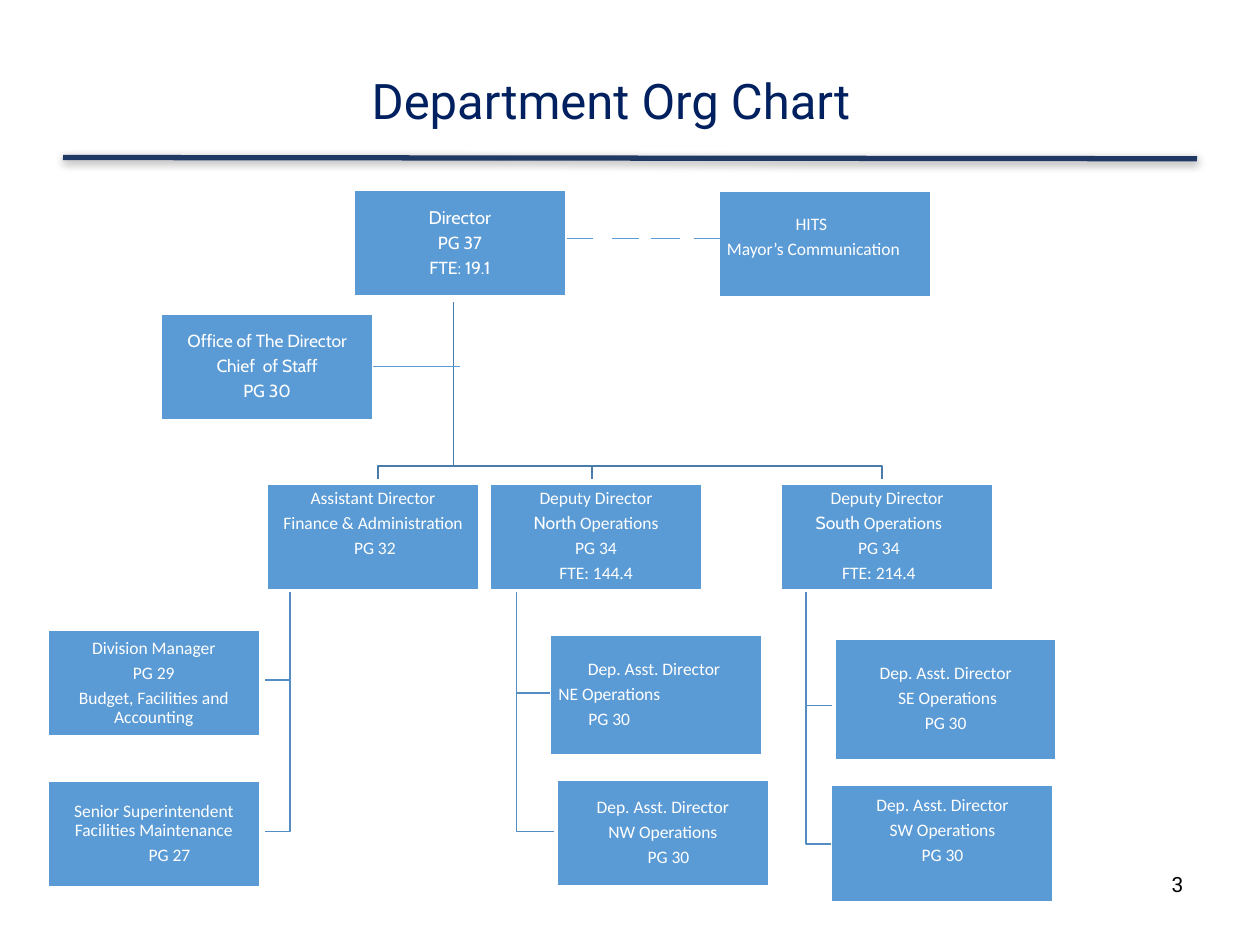
from lxml import etree
from pptx import Presentation
from pptx.dml.color import RGBColor
from pptx.enum.shapes import MSO_CONNECTOR, MSO_SHAPE
from pptx.enum.text import MSO_ANCHOR, PP_ALIGN
from pptx.oxml import parse_xml
from pptx.oxml.ns import nsdecls
from pptx.util import Inches, Pt

prs = Presentation()
prs.slide_width, prs.slide_height = Inches(10), Inches(7.5)
s = prs.slides.add_slide(prs.slide_layouts[6])
U = prs.slide_width / 100  # grid of 100 columns by 75 rows


def rgb(color):
    return RGBColor.from_string(color)


def add_line(x1, y1, x2, y2, color, width, effects=""):
    c = s.shapes.add_connector(MSO_CONNECTOR.STRAIGHT, *(round(v * U) for v in (x1, y1, x2, y2)))
    c.line.color.rgb = rgb(color)
    c.line.width = Pt(width)
    c._element.spPr.append(parse_xml(f'<a:effectLst {nsdecls("a")}>{effects}</a:effectLst>'))
    return c


# Rule under the title
add_line(5, 12.5, 95, 12.6, "203864", 3,
         '<a:outerShdw blurRad="63500" dist="20000" dir="5400000" rotWithShape="0">'
         '<a:srgbClr val="000000"><a:alpha val="38000"/></a:srgbClr></a:outerShdw>')

# Title and page number
for text, x, y, w, h, size, color, align, indent in (
        ("Department Org Chart", 5, 3.3, 68.6, 9.2, 28, "002060", PP_ALIGN.LEFT, 24.5),
        ("3", 71.6, 68.7, 23.3, 4, 12, "000000", PP_ALIGN.RIGHT, 0)):
    tf = s.shapes.add_textbox(*(round(v * U) for v in (x, y, w, h))).text_frame
    tf.word_wrap = True
    if indent:
        tf.vertical_anchor = MSO_ANCHOR.MIDDLE
        tf.margin_left = tf.margin_right = tf.margin_top = tf.margin_bottom = 0
    p = tf.paragraphs[0]
    p.alignment = align
    p._p.get_or_add_pPr().set("marL", str(round(indent * U)))
    r = p.add_run()
    r.text = text
    r.font.name, r.font.size, r.font.color.rgb = "Roboto", Pt(size), rgb(color)

# Bent links: director to deputies, then each deputy to its reports
BUS, ROW2, BOTTOM2 = 36.7, 38.4, 46.9
links = [("497CAB", [(36.5, 23.5), (36.5, BUS), (x, BUS), (x, ROW2)])
         for x in (70.4, 47.3, 29.7)]
for spine, ends in ((63.7, [(66, 67), (66.3, 55.5)]),
                    (40.6, [(44.2, 66.1), (43.7, 55.1)]),
                    (22.9, [(20.6, 66.2), (20.6, 54.2)])):
    links += [("538DC1", [(spine, BOTTOM2), (spine, y), (x, y)]) for x, y in ends]
for color, points in links:
    fb = s.shapes.build_freeform(*points[0], scale=U)
    fb.add_line_segments(points[1:], close=False)
    sp = fb.convert_to_shape()
    sp.shadow.inherit = False
    sp.fill.background()
    sp.line.color.rgb = rgb(color)
    sp.line.width = Pt(1)

# Boxes: x, y, w, h, font, space below the text, lines, sideways shift by line
# A bar in a line ends a first part set in Cabin
W, H = 16.8, 8.4
DEP = "Dep. Asst. Director"
boxes = [
    (28.1, 15.1, W, H, "Cabin", 0, ["Director", "PG 37", "FTE: 19.1"], {}),
    (21.2, ROW2, W, H, "Calibri", 2,
     ["Assistant Director", "Finance & Administration", "PG 32"], {2: 0.3}),
    (3.8, 50, W, H, "Calibri", 0,
     ["Division Manager", "PG 29", "Budget, Facilities and Accounting"], {}),
    (3.8, 62, W, H, "Calibri", 0,
     ["Senior Superintendent Facilities Maintenance", "PG 27"], {1: 2.5}),
    (38.9, ROW2, W, H, "Calibri", 0,
     ["Deputy Director", "North| Operations", "PG 34", "FTE: 144.4"], {}),
    (43.7, 50.4, W, 9.5, "Calibri", 0, [DEP, "NE Operations", "PG 30"], {0: -0.4, 1: -7.5}),
    (44.2, 61.9, W, H, "Calibri", 0, [DEP, "NW Operations", "PG 30"], {2: 0.9}),
    (62, ROW2, W, H, "Calibri", 0,
     ["Deputy Director", "South| Operations", "PG 34", "FTE: 214.4"], {1: -1.3}),
    (66.3, 50.7, 17.5, 9.6, "Calibri", 0, [DEP, "SE Operations", "PG 30"], {1: 0.3}),
    (66, 62.3, 17.6, 9.3, "Calibri", 2, [DEP, "SW Operations", "PG 30"], {}),
    (12.8, 24.9, W, H, "Cabin", 0,
     ["Office of The Director", "Chief  of Staff", "PG 30"], {}),
    (57.1, 15.2, W, H, "Calibri", 1.1, ["HITS", "Mayor’s Communication"], {0: -2.2, 1: 0.3}),
]
for x, y, w, h, font, below, lines, shifts in boxes:
    sp = s.shapes.add_shape(MSO_SHAPE.RECTANGLE, *(round(v * U) for v in (x, y, w, h)))
    sp.shadow.inherit = False
    sp.fill.solid()
    sp.fill.fore_color.rgb = rgb("5B9BD5")
    sp.line.color.rgb = rgb("FFFFFF")
    sp.line.width = Pt(1)
    tf = sp.text_frame
    tf.word_wrap = True
    tf.vertical_anchor = MSO_ANCHOR.MIDDLE
    tf.margin_left = tf.margin_right = tf.margin_top = Inches(0.01)
    tf.margin_bottom = round((0.1 + below) * U)
    for i, line in enumerate(lines):
        p = tf.paragraphs[0] if i == 0 else tf.add_paragraph()
        p.alignment = PP_ALIGN.CENTER
        p.line_spacing = 0.9
        p.space_after = Pt(3.5)
        shift = shifts.get(i, 0)
        if shift:
            side = "marL" if shift > 0 else "marR"
            p._p.get_or_add_pPr().set(side, str(round(abs(shift) * U)))
        parts = line.split("|")
        for part in parts:
            r = p.add_run()
            r.text = part
            r.font.name = font if part == parts[-1] else "Cabin"
            r.font.size = Pt(10.5 if line == "Director" else 10)
            r.font.color.rgb = rgb("FFFFFF")
    if lines[0].startswith("Office"):
        office = sp

# Dashed tie from the director to the side box
for x1, x2 in ((45, 47.1), (48.6, 50.7), (51.7, 54), (55.1, 57.3)):
    add_line(x1, 18.9, x2, 18.9, "5B9BD5", 0.5)

# Tie from the director's office to the trunk
add_line(29.6, 29.1, 36.5, 29.1, "5B9BD5", 0.5).begin_connect(office, 3)

prs.save("out.pptx")
